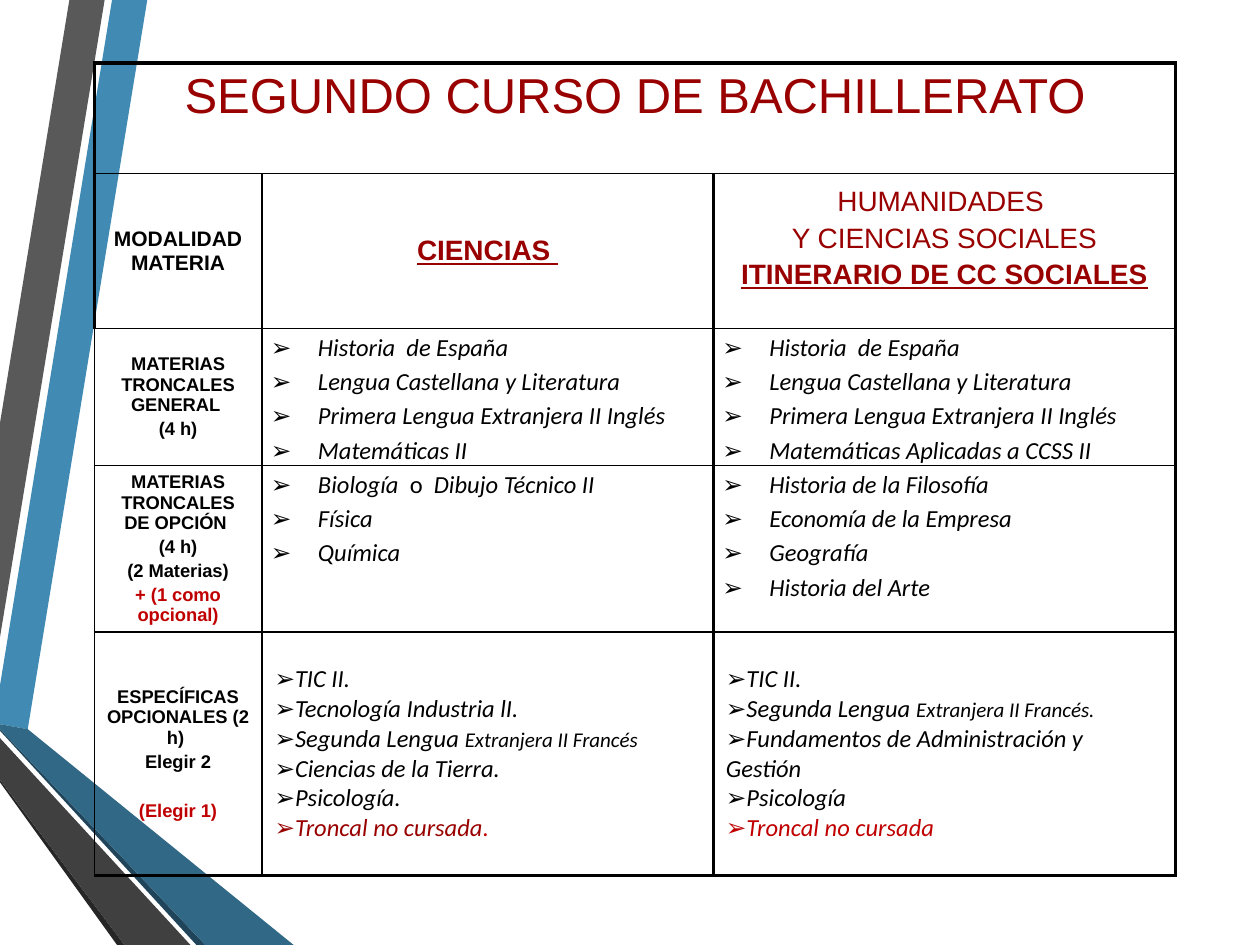
from collections import namedtuple
from dataclasses import dataclass

from lxml.etree import SubElement
from pptx import Presentation
from pptx.dml.color import RGBColor
from pptx.enum.text import MSO_ANCHOR as Anchor, PP_ALIGN as Align
from pptx.oxml.ns import qn
from pptx.util import Cm, Pt

Box = namedtuple("Box", "left top width height")


@dataclass(frozen=True)
class Theme:
    blue: str = "418AB3"
    deep_blue: str = "316886"
    night_blue: str = "20455A"
    gray: str = "595959"
    dark_gray: str = "404040"
    coal: str = "262626"
    black: str = "000000"
    maroon: str = "990000"
    red: str = "C00000"
    head_font: str = "Arial"
    body_font: str = "Calibri"
    title: float = 28
    heading: float = 16
    corner: float = 12
    label: float = 10.5
    body: float = 14
    small: float = 12
    thin: float = 1
    thick: float = 2.25


THEME = Theme()

RIBBONS = [
    (THEME.blue, [(0, 13.82), (0, 14.6), (0.56, 14.7), (2.97, 0), (2.26, 0)]),
    (THEME.gray, [(2.11, 0), (1.4, 0), (0, 8.53), (0, 12.85)]),
    (THEME.coal, [(0, 15.72), (0, 15.77), (2.36, 19.05), (2.51, 19.05)]),
    (THEME.night_blue, [(0, 14.7), (0, 14.73), (3.96, 19.05), (4.14, 19.05)]),
    (THEME.deep_blue, [(0, 14.7), (4.14, 19.05), (5.92, 19.05), (0.56, 14.7), (0, 14.6)]),
    (THEME.dark_gray, [(0, 15.72), (2.51, 19.05), (3.84, 19.05), (0, 14.88)]),
]

COLUMNS = [3.38, 9.1, 9.32]
ROWS = [2.23, 3.12, 2.72, 3.35, 4.9]

LABELS = {
    2: [("MATERIAS TRONCALES GENERAL ", {}), ("(4 h)", {})],
    3: [
        ("MATERIAS TRONCALES DE OPCIÓN ", {}),
        ("(4 h)", {}),
        ("(2 Materias)", {}),
        ("+ (1 como opcional)", {"color": THEME.red}),
    ],
    4: [
        ("ESPECÍFICAS OPCIONALES (2 h) ", {}),
        ("Elegir 2", {}),
        ("(Elegir 1)", {"color": THEME.red, "before": 16.3}),
    ],
}

COMMON = ["Historia  de España", "Lengua Castellana y Literatura",
          "Primera Lengua Extranjera II Inglés"]
CORE_SUBJECTS = {
    (2, 1): COMMON + ["Matemáticas II"],
    (2, 2): COMMON + ["Matemáticas Aplicadas a CCSS II"],
    (3, 1): [
        [("Biología ", {}), (" o  ", {"italic": False}), ("Dibujo Técnico II", {})],
        "Física",
        "Química",
    ],
    (3, 2): ["Historia de la Filosofía", "Economía de la Empresa", "Geografía",
             "Historia del Arte"],
}


def second_language(ending):
    return [("Segunda Lengua ", {}), (ending, {"size": THEME.small})]


OPTIONAL_SUBJECTS = {
    1: [
        "TIC II.",
        "Tecnología Industria lI.",
        second_language("Extranjera II Francés"),
        "Ciencias de la Tierra.",
        "Psicología.",
        [("Troncal no cursada", {"color": THEME.maroon}), (".", {"color": THEME.red})],
    ],
    2: [
        "TIC II.",
        second_language("Extranjera II Francés."),
        "Fundamentos de Administración y Gestión",
        "Psicología",
        [("Troncal no cursada", {"color": THEME.red})],
    ],
}


def add_span(para, text, *, size, font=THEME.head_font, color=THEME.black,
             bold=False, italic=False, underline=False):
    span = para.add_run()
    span.text = text
    span.font.name = font
    span.font.size = Pt(size)
    span.font.color.rgb = RGBColor.from_string(color)
    span.font.bold = bold
    span.font.italic = italic
    span.font.underline = underline


def next_para(cell, index):
    frame = cell.text_frame
    return frame.add_paragraph() if index else frame.paragraphs[0]


def set_insets(cell, side, top, bottom):
    cell.margin_left = cell.margin_right = Cm(side)
    cell.margin_top, cell.margin_bottom = Cm(top), Cm(bottom)


def fill_centered(cell, lines, *, anchor=Anchor.MIDDLE, bottom=0.13, **style):
    set_insets(cell, 0.25, 0.13, bottom)
    cell.vertical_anchor = anchor
    for index, (text, changes) in enumerate(lines):
        look = {**style, **changes}
        para = next_para(cell, index)
        para.alignment = Align.CENTER
        para.space_before = Pt(look.pop("before", look["size"] * 0.2))
        add_span(para, text, **look)


def fill_list(cell, items, *, indent=0, spacing=1):
    for index, item in enumerate(items):
        para = next_para(cell, index)
        para.line_spacing = spacing
        properties = para._p.get_or_add_pPr()
        properties.set("marL", str(Cm(indent)))
        properties.set("indent", str(-Cm(indent)))
        SubElement(properties, qn("a:buFont"), typeface=THEME.head_font)
        SubElement(properties, qn("a:buChar"), char="➢")
        for text, changes in [(item, {})] if isinstance(item, str) else item:
            style = {"size": THEME.body, "font": THEME.body_font, "italic": True}
            add_span(para, text, **{**style, **changes})


def draw_borders(cell, **widths):
    properties = cell._tc.get_or_add_tcPr()
    for side in "LRTB":
        line = SubElement(properties, qn(f"a:ln{side}"), w=str(Pt(widths[side])))
        fill = SubElement(line, qn("a:solidFill"))
        SubElement(fill, qn("a:srgbClr"), val=THEME.black)
    cell.fill.background()


def frame_table(table):
    last = len(ROWS) - 1
    for row in range(len(ROWS)):
        for column in range(len(COLUMNS)):
            title = row == 0
            heavy = {
                "L": title or column == 2 or (row == 1 and column == 0),
                "R": title or column > 0,
                "T": title,
                "B": row == last,
            }
            widths = {side: THEME.thick if on else THEME.thin for side, on in heavy.items()}
            draw_borders(table.cell(row, column), **widths)


def fill_headings(table):
    fill_centered(table.cell(0, 0), [("SEGUNDO CURSO DE BACHILLERATO", {})],
                  anchor=Anchor.TOP, size=THEME.title, color=THEME.maroon)
    fill_centered(table.cell(1, 0), [("MODALIDAD MATERIA", {})],
                  size=THEME.corner, bold=True)
    strong = {"bold": True, "underline": True}
    fill_centered(table.cell(1, 1), [("CIENCIAS ", {**strong, "before": 19.5})],
                  size=THEME.heading, color=THEME.maroon)
    branch = [("HUMANIDADES ", {}), ("Y CIENCIAS SOCIALES", {}),
              ("ITINERARIO DE CC SOCIALES", strong)]
    fill_centered(table.cell(1, 2), branch, bottom=0.64,
                  size=THEME.heading, color=THEME.maroon)


def add_ribbons(page, box):
    for color, points in RIBBONS:
        corners = [(box.left + Cm(x), box.top + Cm(y)) for x, y in points]
        builder = page.shapes.build_freeform(*corners[0])
        builder.add_line_segments(corners[1:], close=True)
        ribbon = builder.convert_to_shape()
        ribbon.shadow.inherit = False
        ribbon.fill.solid()
        ribbon.fill.fore_color.rgb = RGBColor.from_string(color)
        ribbon.line.fill.background()


def add_subject_table(page, box):
    table = page.shapes.add_table(len(ROWS), len(COLUMNS), *box).table
    table.first_row = table.horz_banding = False
    for column, width in zip(table.columns, COLUMNS):
        column.width = Cm(width)
    for row, height in zip(table.rows, ROWS):
        row.height = Cm(height)
    frame_table(table)
    table.cell(0, 0).merge(table.cell(0, len(COLUMNS) - 1))
    fill_headings(table)
    for row, lines in LABELS.items():
        fill_centered(table.cell(row, 0), lines, size=THEME.label, bold=True)
    for (row, column), items in CORE_SUBJECTS.items():
        cell = table.cell(row, column)
        set_insets(cell, 0.18, 0, 0)
        fill_list(cell, items, indent=0.95, spacing=1.15)
    for column, items in OPTIONAL_SUBJECTS.items():
        cell = table.cell(len(ROWS) - 1, column)
        cell.vertical_anchor = Anchor.MIDDLE
        fill_list(cell, items)


def main():
    deck = Presentation()
    deck.slide_width, deck.slide_height = Cm(25.4), Cm(19.05)
    page = deck.slides.add_slide(deck.slide_layouts[6])
    add_ribbons(page, Box(0, 0, Cm(5.92), deck.slide_height))
    add_subject_table(page, Box(Cm(1.9), Cm(1.27), Cm(sum(COLUMNS)), Cm(sum(ROWS))))
    deck.save("out.pptx")


if __name__ == "__main__":
    main()
